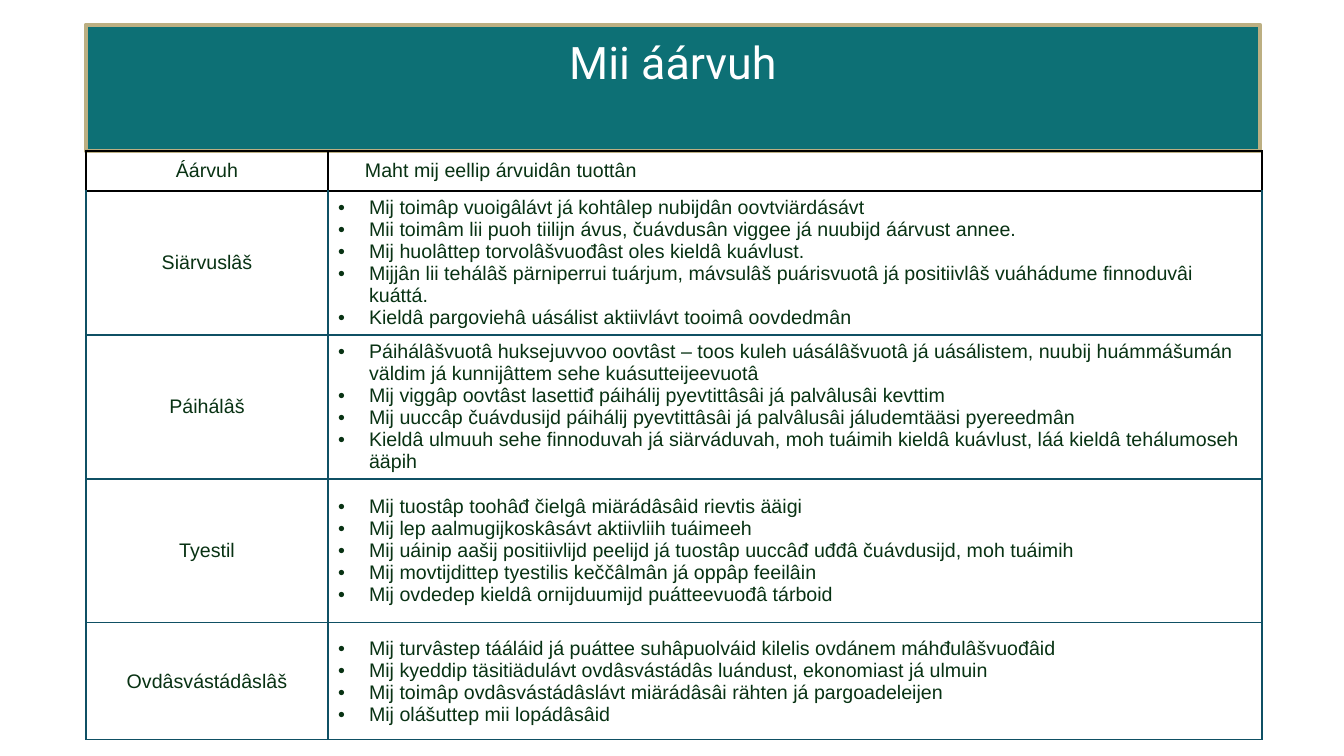
from lxml.etree import SubElement
from pptx import Presentation
from pptx.dml.color import RGBColor
from pptx.enum.shapes import MSO_SHAPE
from pptx.enum.text import MSO_ANCHOR as ANCHOR, PP_ALIGN as ALIGN
from pptx.oxml.ns import qn
from pptx.util import Pt

PX = 914400 / 100.8
COLORS = {"teal": "0D7075", "sand": "BCAF82", "white": "FFFFFF",
          "text": "083213", "grid": "0F5064", "black": "000000"}
HEADER = ("Áárvuh", "Maht mij eellip árvuidân tuottân")
VALUES = [
    ("Siärvuslâš", [
        "Mij toimâp vuoigâlávt já kohtâlep nubijdân oovtviärdásávt",
        "Mii toimâm lii puoh tiilijn ávus, čuávdusân viggee já nuubijd áárvust annee.",
        "Mij huolâttep torvolâšvuođâst oles kieldâ kuávlust.",
        "Mijjân lii tehálâš pärniperrui tuárjum, mávsulâš puárisvuotâ já positiivlâš "
        "vuáhádume finnoduvâi kuáttá.",
        "Kieldâ pargoviehâ uásálist aktiivlávt tooimâ oovdedmân"]),
    ("Páihálâš", [
        "Páihálâšvuotâ huksejuvvoo oovtâst – toos kuleh uásálâšvuotâ já uásálistem, "
        "nuubij huámmášumán väldim já kunnijâttem sehe kuásutteijeevuotâ",
        "Mij viggâp oovtâst lasettiđ páihálij pyevtittâsâi já palvâlusâi kevttim",
        "Mij uuccâp čuávdusijd páihálij pyevtittâsâi já palvâlusâi jáludemtääsi pyereedmân",
        "Kieldâ ulmuuh sehe finnoduvah já siärváduvah, moh tuáimih kieldâ kuávlust, "
        "láá kieldâ tehálumoseh ääpih"]),
    ("Tyestil", [
        "Mij tuostâp toohâđ čielgâ miärádâsâid rievtis ääigi",
        "Mij lep aalmugijkoskâsávt aktiivliih tuáimeeh",
        "Mij uáinip aašij positiivlijd peelijd já tuostâp uuccâđ uđđâ čuávdusijd, moh tuáimih",
        "Mij movtijdittep tyestilis keččâlmân já oppâp feeilâin",
        "Mij ovdedep kieldâ ornijduumijd puátteevuođâ tárboid"]),
    ("Ovdâsvástádâslâš", [
        "Mij turvâstep tááláid já puáttee suhâpuolváid kilelis ovdánem máhđulâšvuođâid",
        "Mij kyeddip täsitiädulávt ovdâsvástádâs luándust, ekonomiast já ulmuin",
        "Mij toimâp ovdâsvástádâslávt miärádâsâi rähten já pargoadeleijen",
        "Mij olášuttep mii lopádâsâid"]),
]


def px(n):
    """Turn pixels into EMU."""
    return round(n * PX)


def rgb(name):
    """Look up a named colour."""
    return RGBColor.from_string(COLORS[name])


def add_run(p, text, font, size, color):
    """Add one styled run to a paragraph."""
    r = p.add_run()
    r.text = text
    r.font.name, r.font.size = font, Pt(size)
    r.font.color.rgb = rgb(color)


def add_bullet(p, indent):
    """Give a paragraph a hanging bullet."""
    pPr = p._p.get_or_add_pPr()
    pPr.set("marL", str(px(indent)))
    pPr.set("indent", str(-px(indent)))
    SubElement(pPr, qn("a:buFont"), typeface="Arial")
    SubElement(pPr, qn("a:buChar"), char="•")


def set_borders(cell, color, top):
    """Draw the four cell borders, the top one in its own colour."""
    tcPr = cell._tc.get_or_add_tcPr()
    for side in "LRTB":
        ln = SubElement(tcPr, qn(f"a:ln{side}"), w=str(Pt(1)))
        fill = SubElement(ln, qn("a:solidFill"))
        SubElement(fill, qn("a:srgbClr"), val=COLORS[top if side == "T" else color])


def fill_cell(cell, lines, color, top, centred=False, bullets=False):
    """Write paragraphs into a bordered, unfilled cell."""
    set_borders(cell, color, top)
    cell.fill.background()
    cell.vertical_anchor = ANCHOR.MIDDLE
    tf = cell.text_frame
    for i, line in enumerate(lines):
        p = tf.add_paragraph() if i else tf.paragraphs[0]
        p.alignment = ALIGN.CENTER if centred else ALIGN.LEFT
        if bullets:
            add_bullet(p, 31)
        add_run(p, line, "Arial", 14, "text")


def add_title(s, x, y, w, h):
    """Place the framed title banner."""
    sp = s.shapes.add_shape(MSO_SHAPE.RECTANGLE, px(x), px(y), px(w), px(h))
    sp.shadow.inherit = False
    sp.fill.solid()
    sp.fill.fore_color.rgb = rgb("teal")
    sp.line.color.rgb = rgb("sand")
    sp.line.width = Pt(3.5)
    tf = sp.text_frame
    tf.word_wrap = True
    tf.vertical_anchor = ANCHOR.TOP
    tf.margin_left = tf.margin_right = px(39)
    tf.margin_top, tf.margin_bottom = px(16), px(12)
    p = tf.paragraphs[0]
    p.alignment = ALIGN.CENTER
    p.line_spacing = 0.9
    add_run(p, "Mii áárvuh", "Roboto", 32, "white")


def add_values(s, x, y, cols, rows):
    """Place the table of values and how they are lived."""
    table = s.shapes.add_table(len(rows), len(cols), px(x), px(y),
                               px(sum(cols)), px(sum(rows))).table
    table.first_row = table.horz_banding = False
    for col, w in zip(table.columns, cols):
        col.width = px(w)
    for row, h in zip(table.rows, rows):
        row.height = px(h)
    fill_cell(table.cell(0, 0), HEADER[:1], "black", "black", centred=True)
    fill_cell(table.cell(0, 1), HEADER[1:], "black", "black")
    table.cell(0, 1).margin_left = px(37)
    for i, (name, lines) in enumerate(VALUES, 1):
        top = "black" if i == 1 else "grid"
        fill_cell(table.cell(i, 0), [name], "grid", top, centred=True)
        fill_cell(table.cell(i, 1), lines, "grid", top, bullets=True)


def main():
    """Build and save the slide."""
    prs = Presentation()
    prs.slide_width, prs.slide_height = px(1344), px(756)
    s = prs.slides.add_slide(prs.slide_layouts[6])
    add_title(s, 86, 25, 1174, 126)
    add_values(s, 86, 151, [242, 934], [40, 144, 144, 144, 117])
    prs.save("out.pptx")


if __name__ == "__main__":
    main()
